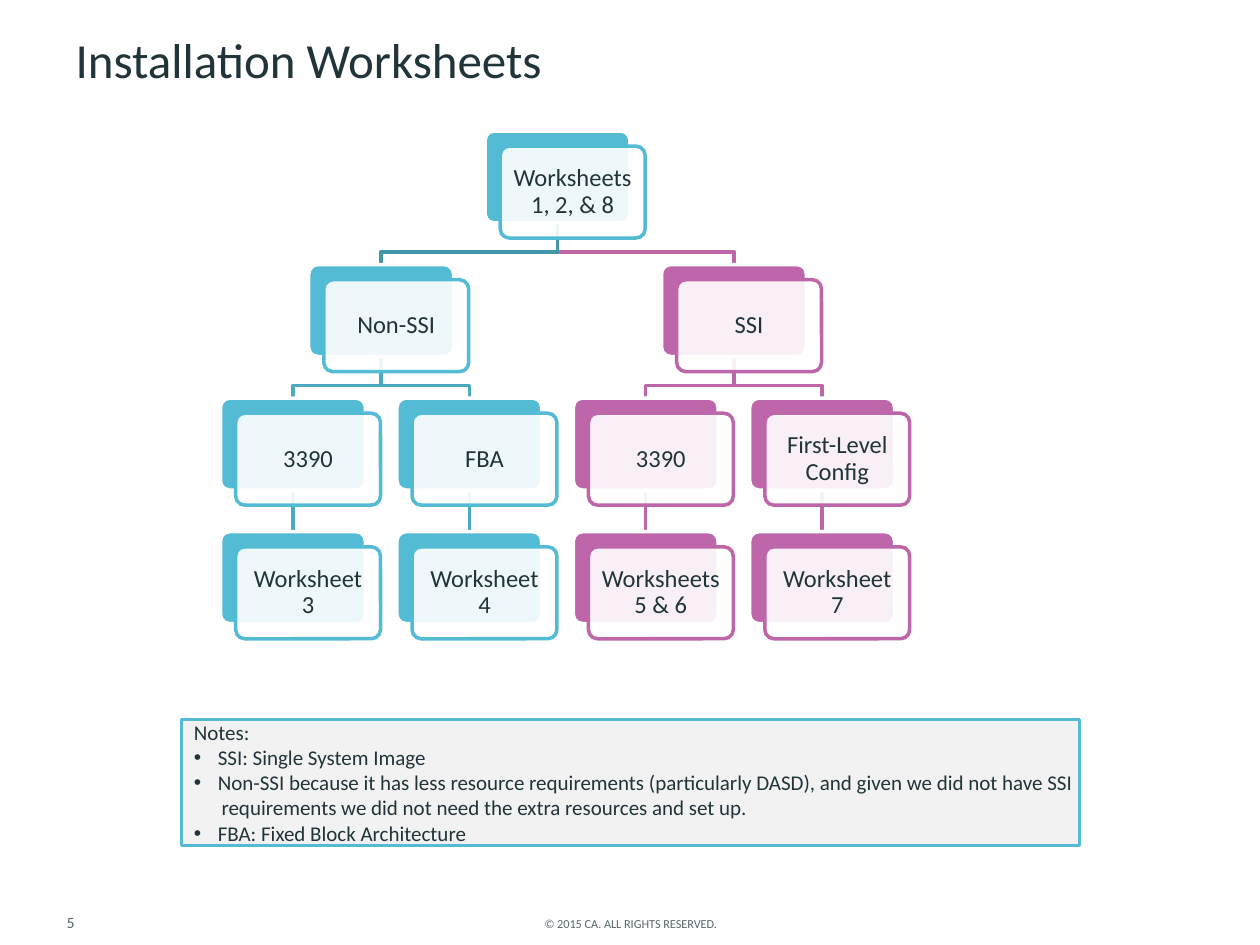
from dataclasses import dataclass

from lxml.etree import SubElement
from pptx import Presentation
from pptx.dml.color import RGBColor
from pptx.enum.shapes import MSO_CONNECTOR, MSO_SHAPE
from pptx.enum.text import MSO_ANCHOR, PP_ALIGN
from pptx.oxml.ns import qn
from pptx.slide import Slide
from pptx.util import Inches, Pt

BLUE, PINK, WHITE = "53BBD4", "BD66A9", "FFFFFF"
BLUE_BRANCH, BLUE_LEAF = "4296AA", "4BAAC0"
CARD_WIDTH, CARD_HEIGHT = 1.15, 0.73

NODES = {
    "root": ("Worksheets 1, 2, & 8", 1.5, 0, BLUE),
    "non_ssi": ("Non-SSI", 0.5, 1, BLUE),
    "non_ssi_3390": ("3390", 0, 2, BLUE),
    "worksheet_3": ("Worksheet 3", 0, 3, BLUE),
    "fba": ("FBA", 1, 2, BLUE),
    "worksheet_4": ("Worksheet 4", 1, 3, BLUE),
    "ssi": ("SSI", 2.5, 1, PINK),
    "ssi_3390": ("3390", 2, 2, PINK),
    "worksheets_5_6": ("Worksheets 5 & 6", 2, 3, PINK),
    "first_level": ("First-Level Config", 3, 2, PINK),
    "worksheet_7": ("Worksheet 7", 3, 3, PINK),
}
LINKS = [
    ("first_level", "worksheet_7", PINK),
    ("ssi", "first_level", PINK),
    ("ssi_3390", "worksheets_5_6", PINK),
    ("ssi", "ssi_3390", PINK),
    ("root", "ssi", PINK),
    ("fba", "worksheet_4", BLUE_LEAF),
    ("non_ssi", "fba", BLUE_LEAF),
    ("non_ssi_3390", "worksheet_3", BLUE_LEAF),
    ("non_ssi", "non_ssi_3390", BLUE_LEAF),
    ("root", "non_ssi", BLUE_BRANCH),
]
REMARKS = [
    ("Notes:", 0, False),
    ("SSI: Single System Image", 0.19, True),
    ("Non-SSI because it has less resource requirements (particularly DASD), "
     "and given we did not have SSI", 0.19, True),
    ("requirements we did not need the extra resources and set up.", 0.22, False),
    ("FBA: Fixed Block Architecture", 0.19, True),
]


def color(value):
    """Turn a hex string into a colour."""
    return RGBColor.from_string(value)


def apply(target, values):
    """Set each attribute of the target from a dict of values."""
    for name, value in values.items():
        setattr(target, name, value)


def node_position(column, row):
    """Return the left and top of a card in the tree grid."""
    return 1.75 + 1.4 * column, 1.04 + 1.06 * row


@dataclass
class SlideBuilder:
    """Hold the style and the current slide."""

    slide: Slide
    font: str = "Calibri"
    text_color: str = "20343A"
    muted_color: str = "58676D"

    def format_paragraph(self, paragraph, size, text_color, **values):
        """Style one paragraph and its font."""
        apply(paragraph, values)
        apply(paragraph.font, {"name": self.font, "size": Pt(size)})
        paragraph.font.color.rgb = color(text_color)

    def outline(self, shape, line_color):
        """Give a shape a two-point line and no shadow."""
        shape.shadow.inherit = False
        shape.line.color.rgb = color(line_color)
        shape.line.width = Pt(2)

    def title(self, text, left, top, width, height):
        """Place the title placeholder."""
        shape = self.slide.shapes.title
        apply(shape, {"left": Inches(left), "top": Inches(top),
                      "width": Inches(width), "height": Inches(height)})
        shape.text_frame.text = text
        shape.text_frame.vertical_anchor = MSO_ANCHOR.MIDDLE
        self.format_paragraph(shape.text_frame.paragraphs[0], 28, self.text_color,
                              alignment=PP_ALIGN.LEFT, line_spacing=0.9)

    def footer(self, text, left, width, size, alignment):
        """Add a small text at the foot of the slide."""
        shape = self.slide.shapes.add_textbox(
            Inches(left), Inches(7.07), Inches(width), Inches(0.37))
        frame = shape.text_frame
        apply(frame, {"text": text, "word_wrap": True,
                      "vertical_anchor": MSO_ANCHOR.BOTTOM})
        self.format_paragraph(frame.paragraphs[0], size, self.muted_color,
                              alignment=alignment)

    def box(self, preset, left, top, width, height, fill_color, line_color):
        """Add a filled and outlined preset shape."""
        shape = self.slide.shapes.add_shape(
            preset, Inches(left), Inches(top), Inches(width), Inches(height))
        shape.fill.solid()
        shape.fill.fore_color.rgb = color(fill_color)
        self.outline(shape, line_color)
        return shape

    def card(self, text, column, row, card_color):
        """Add a coloured card with a translucent labelled card in front."""
        left, top = node_position(column, row)
        for offset, fill, line in ((0, card_color, WHITE), (0.12, WHITE, card_color)):
            shape = self.box(MSO_SHAPE.ROUNDED_RECTANGLE, left + offset, top + offset,
                             CARD_WIDTH, CARD_HEIGHT, fill, line)
            shape.adjustments[0] = 0.1
        fill_element = shape._element.spPr.find(qn("a:solidFill"))
        SubElement(fill_element[0], qn("a:alpha"), val="90000")
        frame = shape.text_frame
        margins = dict.fromkeys(
            ("margin_left", "margin_top", "margin_right", "margin_bottom"), Inches(0.08))
        apply(frame, {"text": text, "word_wrap": True,
                      "vertical_anchor": MSO_ANCHOR.MIDDLE, **margins})
        self.format_paragraph(frame.paragraphs[0], 14, self.text_color,
                              alignment=PP_ALIGN.CENTER, line_spacing=0.9)

    def link(self, parent, child, line_color):
        """Join two cards by a straight or stepped line."""
        (start_x, start_y), (end_x, end_y) = (
            node_position(*NODES[name][1:3]) for name in (parent, child))
        start_x, end_x = (Inches(x + CARD_WIDTH / 2) for x in (start_x, end_x))
        bend_y = Inches(start_y + CARD_HEIGHT + 0.23)
        start_y, end_y = Inches(start_y + CARD_HEIGHT), Inches(end_y)
        if start_x == end_x:
            connector = self.slide.shapes.add_connector(
                MSO_CONNECTOR.STRAIGHT, start_x, start_y, end_x, end_y)
            connector.line.color.rgb = color(line_color)
            connector.line.width = Pt(2)
            SubElement(connector._element.spPr, qn("a:effectLst"))
            return
        builder = self.slide.shapes.build_freeform(start_x, start_y)
        builder.add_line_segments(
            [(start_x, bend_y), (end_x, bend_y), (end_x, end_y)], close=False)
        shape = builder.convert_to_shape()
        shape.fill.background()
        self.outline(shape, line_color)

    def framed_list(self, items, left, top, width, height):
        """Add a framed list with bulleted and plain lines."""
        shape = self.box(MSO_SHAPE.RECTANGLE, left, top, width, height, "F2F2F2", BLUE)
        frame = shape.text_frame
        apply(frame, {"word_wrap": False, "vertical_anchor": MSO_ANCHOR.MIDDLE,
                      "margin_top": Inches(0.1), "margin_bottom": Inches(0.1)})
        for index, (text, indent, bulleted) in enumerate(items):
            paragraph = frame.add_paragraph() if index else frame.paragraphs[0]
            paragraph.text = text
            properties = paragraph._p.get_or_add_pPr()
            properties.set("marL", str(Inches(indent)))
            if bulleted:
                properties.set("indent", str(-Inches(indent)))
                SubElement(properties, qn("a:buFont"), typeface="Arial")
                SubElement(properties, qn("a:buChar"), char="•")
            self.format_paragraph(paragraph, 12, self.text_color,
                                  alignment=PP_ALIGN.LEFT)


def main():
    """Build the worksheet tree slide."""
    presentation = Presentation()
    apply(presentation, {"slide_width": Inches(10), "slide_height": Inches(7.5)})
    builder = SlideBuilder(presentation.slides.add_slide(presentation.slide_layouts[5]))
    builder.footer("5", 0.43, 0.58, 9, PP_ALIGN.LEFT)
    builder.footer("© 2015 CA. ALL RIGHTS RESERVED.", 1.37, 7.27, 7, PP_ALIGN.CENTER)
    builder.title("Installation Worksheets", 0.5, 0.23, 9, 0.53)
    for link in LINKS:
        builder.link(*link)
    for node in NODES.values():
        builder.card(*node)
    builder.framed_list(REMARKS, 1.44, 5.71, 7.13, 1)
    presentation.save("out.pptx")


if __name__ == "__main__":
    main()
